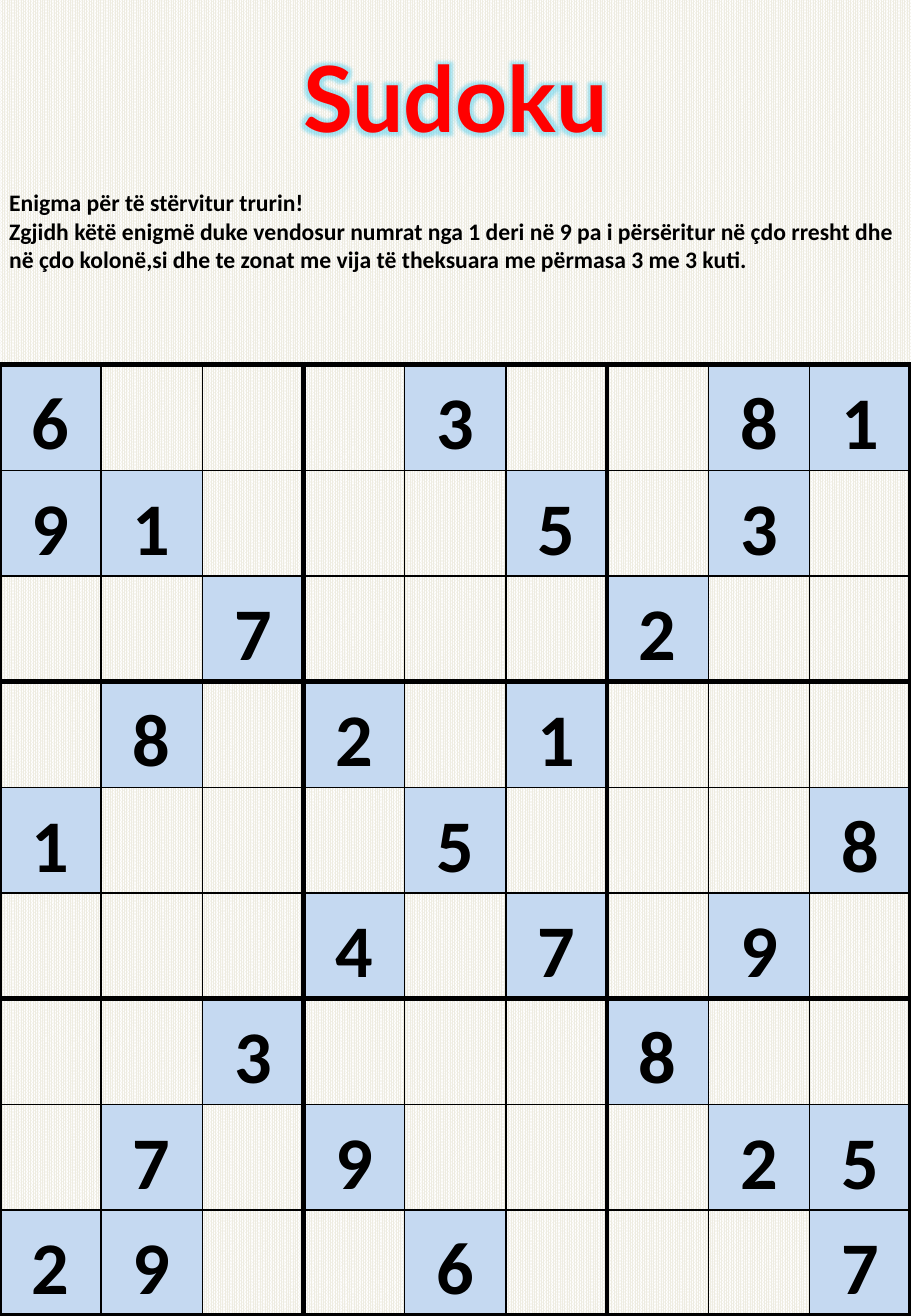
import dataclasses
import itertools

import lxml.etree
import pptx
import pptx.dml.color
import pptx.enum.dml
import pptx.enum.text
import pptx.oxml.ns
import pptx.util

WIDE, HIGH = 7.5, 10.83
SIZE, BLOCK = 9, 3
COL, ROW = WIDE / SIZE, 0.87

ALIGN = pptx.enum.text.PP_ALIGN
MIDDLE = pptx.enum.text.MSO_ANCHOR.MIDDLE
TITLE = "Sudoku"
RULES = [
    "Enigma për të stërvitur trurin!",
    "Zgjidh këtë enigmë duke vendosur numrat nga 1 deri në 9 pa i përsëritur "
    "në çdo rresht dhe në çdo kolonë,si dhe te zonat me vija të theksuara "
    "me përmasa 3 me 3 kuti.",
]
PUZZLE = [
    "6...3..81",
    "91...5.3.",
    "..7...2..",
    ".8.2.1...",
    "1...5...8",
    "...4.7.9.",
    "..3...8..",
    ".7.9...25",
    "29..6...7",
]


@dataclasses.dataclass(frozen=True)
class Theme:
    """Colours, fonts, type sizes and line widths."""
    ink: str = "000000"
    red: str = "FF0000"
    glow: str = "25C6F0"
    clue: str = "C5D9F1"
    weave: str = "EEECE1"
    paper: str = "FFFFFF"
    head: str = "Lato"
    body: str = "Calibri"
    title: int = 54
    text: int = 14
    digit: int = 44
    thin: int = 1
    thick: int = 3


THEME = Theme()


def rgb(code):
    """Turn a hex code into a colour."""
    return pptx.dml.color.RGBColor.from_string(code)


def inch(size):
    """Turn inches into a length."""
    return pptx.util.Inches(size)


def child(node, tag, **attrs):
    """Add a drawing element under a node."""
    return lxml.etree.SubElement(node, pptx.oxml.ns.qn(tag), attrs)


def add_run(para, text, face, size, tone):
    """Add one bold run to a paragraph."""
    run = para.add_run()
    run.text = text
    run.font.size = pptx.util.Pt(size)
    run.font.bold = True
    run.font.color.rgb = rgb(tone)
    run.font.name = face
    return run


def add_box(slide, left, top, width, height):
    """Add a wrapped text box, placed by shares of the slide."""
    box = slide.shapes.add_textbox(
        inch(left * WIDE), inch(top * HIGH), inch(width * WIDE), inch(height * HIGH))
    box.text_frame.word_wrap = True
    return box.text_frame


def add_glow(run):
    """Put a soft glow around a run."""
    props = run.font._element
    effect = child(props, "a:effectLst")
    halo = child(effect, "a:glow", rad=str(pptx.util.Pt(8)))
    tone = child(halo, "a:srgbClr", val=THEME.glow)
    child(tone, "a:alpha", val="40000")
    props.find(pptx.oxml.ns.qn("a:solidFill")).addnext(effect)


def add_title(slide):
    """Add the glowing title."""
    frame = add_box(slide, 0.05, 0.023, 0.9, 0.1)
    frame.vertical_anchor = MIDDLE
    para = frame.paragraphs[0]
    para.alignment = ALIGN.CENTER
    add_glow(add_run(para, TITLE, THEME.head, THEME.title, THEME.red))


def add_rules(slide):
    """Add the rules of the game."""
    frame = add_box(slide, -0.003, 0.1385, 1, 0.096)
    for spot, text in enumerate(RULES):
        para = frame.add_paragraph() if spot else frame.paragraphs[0]
        add_run(para, text, THEME.body, THEME.text, THEME.ink)


def add_edges(cell, row, col):
    """Draw cell borders, thick around each block."""
    first, last = 0, BLOCK - 1
    props = cell._tc.get_or_add_tcPr()
    for side, place, edge in (("L", col, first), ("R", col, last),
                              ("T", row, first), ("B", row, last)):
        width = THEME.thick if place % BLOCK == edge else THEME.thin
        line = child(props, f"a:ln{side}", w=str(pptx.util.Pt(width)))
        child(child(line, "a:solidFill"), "a:srgbClr", val=THEME.ink)


def add_clue(cell, digit):
    """Fill a cell with a given digit."""
    cell.fill.solid()
    cell.fill.fore_color.rgb = rgb(THEME.clue)
    para = cell.text_frame.paragraphs[0]
    para.alignment = ALIGN.CENTER
    para.line_spacing = 1.15
    add_run(para, digit, THEME.body, THEME.digit, THEME.ink)


def add_grid(slide):
    """Add the puzzle along the foot of the slide."""
    deep = SIZE * ROW
    table = slide.shapes.add_table(
        SIZE, SIZE, 0, inch(HIGH - deep), inch(WIDE), inch(deep)).table
    table.first_row = table.horz_banding = False
    for col in table.columns:
        col.width = inch(COL)
    for row in table.rows:
        row.height = inch(ROW)
    for row, col in itertools.product(range(SIZE), repeat=2):
        cell = table.cell(row, col)
        cell.vertical_anchor = MIDDLE
        cell.margin_left = cell.margin_right = inch(0.07)
        cell.margin_top = cell.margin_bottom = 0
        add_edges(cell, row, col)
        digit = PUZZLE[row][col]
        if digit == ".":
            cell.fill.background()
        else:
            add_clue(cell, digit)


def add_weave(slide):
    """Give the slide its woven background."""
    fill = slide.background.fill
    fill.patterned()
    fill.pattern = pptx.enum.dml.MSO_PATTERN.PERCENT_90
    fill.fore_color.rgb = rgb(THEME.weave)
    fill.back_color.rgb = rgb(THEME.paper)


def main():
    """Build and save the puzzle page."""
    deck = pptx.Presentation()
    deck.slide_width, deck.slide_height = inch(WIDE), inch(HIGH)
    slide = deck.slides.add_slide(deck.slide_layouts[6])
    add_weave(slide)
    add_title(slide)
    add_rules(slide)
    add_grid(slide)
    deck.save("out.pptx")


if __name__ == "__main__":
    main()
